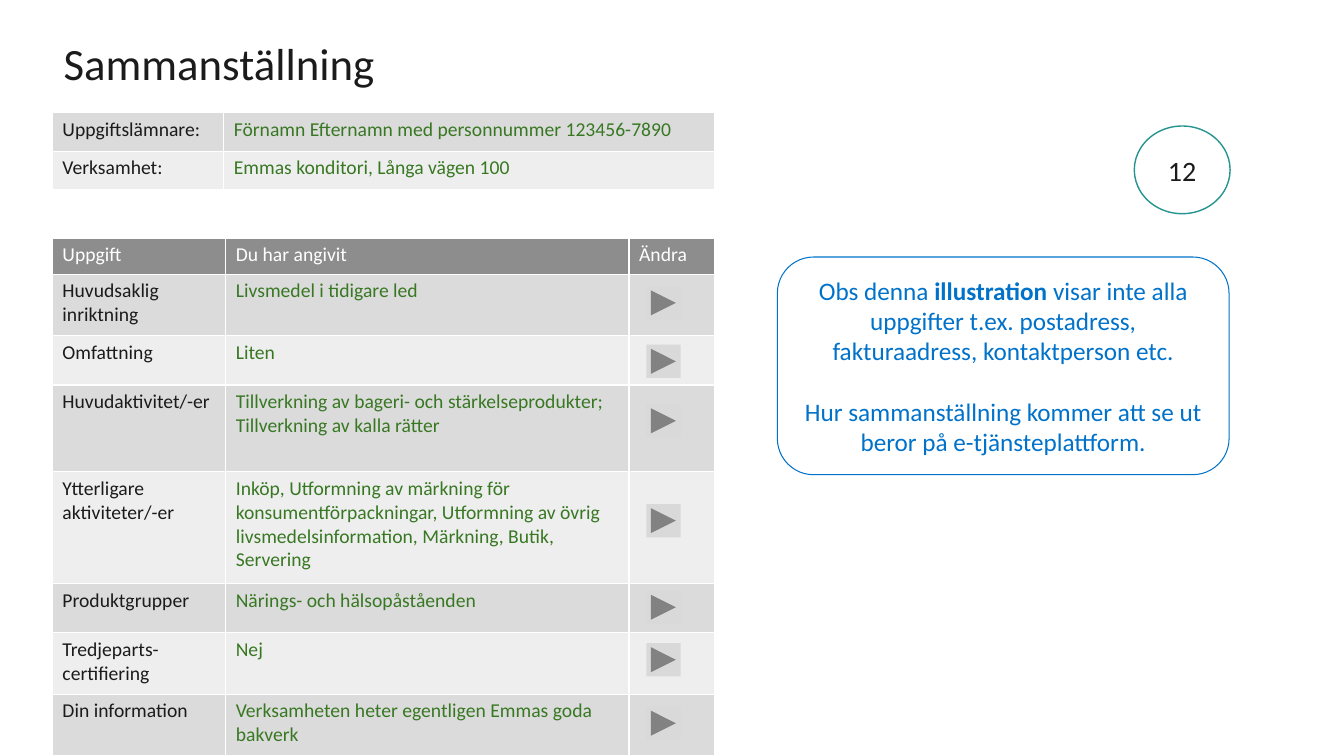
from lxml.etree import SubElement
from pptx import Presentation
from pptx.dml.color import RGBColor
from pptx.enum.shapes import MSO_SHAPE
from pptx.enum.text import MSO_ANCHOR, MSO_AUTO_SIZE, PP_ALIGN
from pptx.oxml.ns import qn
from pptx.util import Inches, Pt

W, H = Inches(13.33), Inches(7.5)
COLORS = {
    "text": "1B1B1B", "answer": "387823", "header": "8D8D8D", "dark": "DBDBDB",
    "light": "EEEEEE", "white": "FFFFFF", "button": "D9D9D9", "note": "0072CA",
    "ring": "259490",
}
REPORTER = [
    ("Uppgiftslämnare:", "Förnamn Efternamn med personnummer 123456-7890"),
    ("Verksamhet:", "Emmas konditori, Långa vägen 100"),
]
SUMMARY = [
    ("Uppgift", "Du har angivit", "Ändra"),
    ("Huvudsaklig inriktning", "Livsmedel i tidigare led", ""),
    ("Omfattning", "Liten", ""),
    ("Huvudaktivitet/-er", "Tillverkning av bageri- och stärkelseprodukter; "
     "Tillverkning av kalla rätter", ""),
    ("Ytterligare aktiviteter/-er", "Inköp, Utformning av märkning för "
     "konsumentförpackningar, Utformning av övrig livsmedelsinformation, "
     "Märkning, Butik, Servering", ""),
    ("Produktgrupper", "Närings- och hälsopåståenden", ""),
    ("Tredjeparts-certifiering", "Nej", ""),
    ("Din information", "Verksamheten heter egentligen Emmas goda bakverk", ""),
]
BUTTON_TOPS = [37.87, 45.6, 53.47, 66.67, 78.13, 85.07, 93.47]
NOTE = [
    ["Obs denna ", "illustration ", "visar inte alla uppgifter t.ex. postadress, "
     "fakturaadress, kontaktperson etc."],
    ["Hur sammanställning kommer att se ut beror på e-tjänsteplattform."],
]


def rgb(name):
    """Return a named colour."""
    return RGBColor.from_string(COLORS[name])


def wide(pct):
    """Return a percentage of the slide width."""
    return int(W * pct / 100)


def high(pct):
    """Return a percentage of the slide height."""
    return int(H * pct / 100)


def box(left, top, width, height):
    """Return a rectangle given in percentages of the slide."""
    return wide(left), high(top), wide(width), high(height)


def style(font, size, color):
    """Set the typeface, size and colour of a font."""
    font.name, font.size = "Calibri", Pt(size)
    font.color.rgb = rgb(color)


def add_title(s, text):
    """Fill and place the title placeholder."""
    sp = s.shapes.title
    sp.left, sp.top, sp.width, sp.height = box(3.98, 4, 24.9, 8.53)
    tf = sp.text_frame
    tf.text = text
    tf.word_wrap, tf.auto_size = False, MSO_AUTO_SIZE.NONE
    tf.vertical_anchor = MSO_ANCHOR.TOP
    p = tf.paragraphs[0]
    p.alignment = PP_ALIGN.LEFT
    style(p.runs[0].font, 32, "text")


def add_borders(cell):
    """Draw thin white lines around a cell."""
    tcPr = cell._tc.get_or_add_tcPr()
    for i, side in enumerate(("lnL", "lnR", "lnT", "lnB")):
        ln = SubElement(tcPr, qn(f"a:{side}"), w=str(Pt(1)))
        fill = SubElement(ln, qn("a:solidFill"))
        SubElement(fill, qn("a:srgbClr"), val=COLORS["white"])
        tcPr.insert(i, ln)


def add_answers(s, top, cols, rows, texts, header=False):
    """Add a banded table of labels and answers."""
    area = box(3.9, top, sum(cols), sum(rows))
    table = s.shapes.add_table(len(rows), len(cols), *area).table
    for column, width in zip(table.columns, cols):
        column.width = wide(width)
    for i, (height, values) in enumerate(zip(rows, texts)):
        table.rows[i].height = high(height)
        is_header = header and i == 0
        band = "dark" if (i - header) % 2 == 0 else "light"
        for j, value in enumerate(values):
            cell = table.cell(i, j)
            cell.text = value
            cell.fill.solid()
            cell.fill.fore_color.rgb = rgb("header" if is_header else band)
            add_borders(cell)
            p = cell.text_frame.paragraphs[0]
            color = "white" if is_header else ("answer" if j else "text")
            style(p.font, 14, color)
            for r in p.runs:
                style(r.font, 14, color)
                r.font.bold = False


def add_outline(s, kind, area, fill=None, line=None, weight=1):
    """Add a shape with an optional fill and line."""
    sp = s.shapes.add_shape(kind, *box(*area))
    sp.shadow.inherit = False
    if fill:
        sp.fill.solid()
        sp.fill.fore_color.rgb = rgb(fill)
    else:
        sp.fill.background()
    if line:
        sp.line.color.rgb = rgb(line)
        sp.line.width = Pt(weight)
    else:
        sp.line.fill.background()
    return sp


def add_centred(sp, paragraphs, size, color, bold=()):
    """Write centred paragraphs of runs into a shape."""
    tf = sp.text_frame
    tf.word_wrap, tf.vertical_anchor = True, MSO_ANCHOR.MIDDLE
    for i, runs in enumerate(paragraphs):
        p = tf.add_paragraph() if i else tf.paragraphs[0]
        p.alignment = PP_ALIGN.CENTER
        if i:
            p.space_before = Pt(22)
        for text in runs:
            r = p.add_run()
            r.text = text
            style(r.font, size, color)
            r.font.bold = text in bold


def main():
    """Build the summary slide."""
    prs = Presentation()
    prs.slide_width, prs.slide_height = W, H
    s = prs.slides.add_slide(prs.slide_layouts[5])
    add_title(s, "Sammanställning")
    add_answers(s, 31.47, [12.9, 30.01, 6.38],
                [4.8, 8.13, 6.53, 11.47, 14.8, 6.53, 8.13, 8.13], SUMMARY, True)
    add_answers(s, 14.93, [12.75, 36.53], [5.07, 5.07], REPORTER)
    for top in BUTTON_TOPS:
        add_outline(s, MSO_SHAPE.ACTION_BUTTON_FORWARD_OR_NEXT,
                    (48.09, top, 2.55, 4.4), "button")
    note = add_outline(s, MSO_SHAPE.ROUNDED_RECTANGLE, (57.84, 34, 33.61, 28.8),
                       line="note", weight=0.75)
    add_centred(note, NOTE, 18, "note", bold=("illustration ",))
    step = add_outline(s, MSO_SHAPE.OVAL, (84.4, 16.67, 7.13, 11.6), "white", "ring")
    add_centred(step, [["12"]], 20, "text")
    prs.save("out.pptx")


if __name__ == "__main__":
    main()
